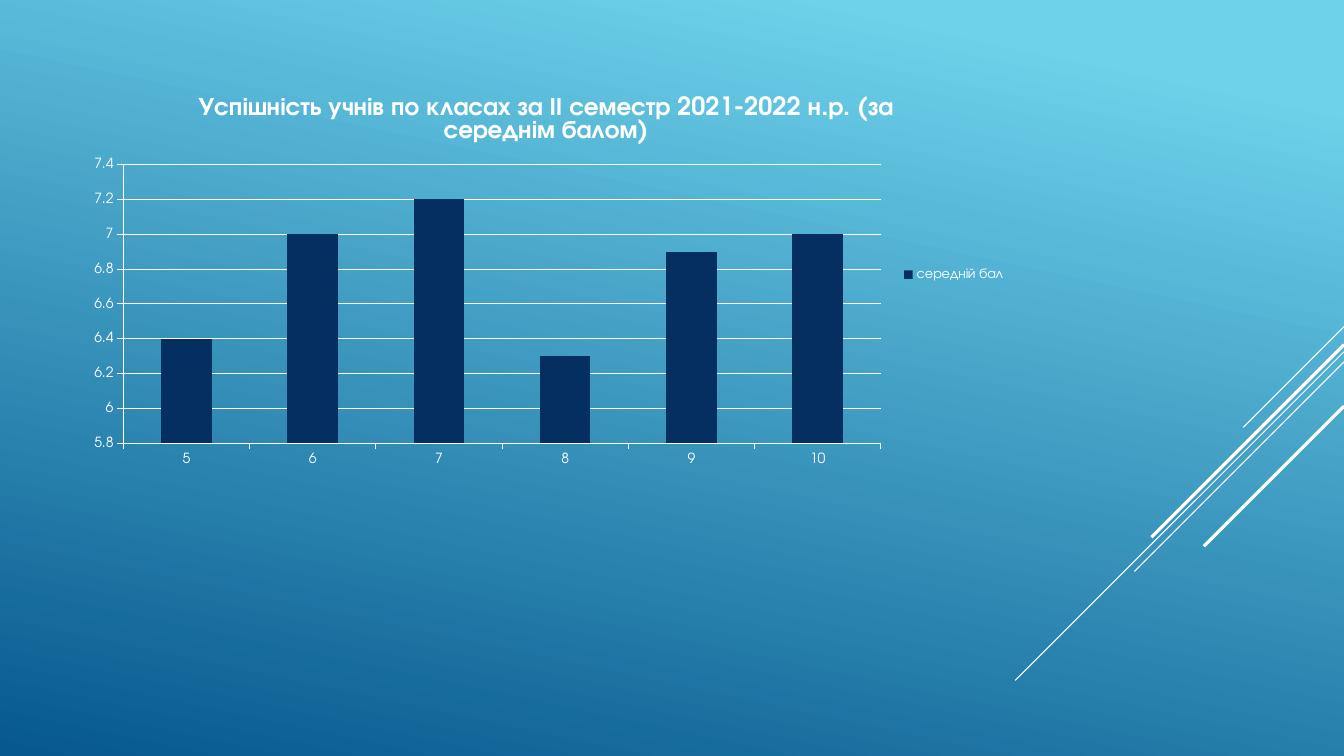
from pptx import Presentation
from pptx.chart.data import CategoryChartData as ChartData
from pptx.dml.color import RGBColor
from pptx.enum.chart import XL_CHART_TYPE as ChartType
from pptx.enum.chart import XL_LEGEND_POSITION as LegendPosition
from pptx.enum.chart import XL_TICK_MARK as TickMark
from pptx.enum.shapes import MSO_CONNECTOR as Connector
from pptx.oxml.ns import qn
from pptx.util import Inches, Pt
from lxml.etree import SubElement

COLOURS = {"white": "FFFFFF", "sky": "6ED2EB", "ocean": "06588E", "navy": "052F61"}
FONT = "TeX Gyre Adventor"
PAGE_WIDTH, PAGE_HEIGHT = 13.33, 7.5


class SlideBuilder:
    def __init__(self, page):
        self.page = page

    def colour(self, name):
        return RGBColor.from_string(COLOURS[name])

    def style_font(self, font, size, bold=False):
        font.name = FONT
        font.size = Pt(size)
        font.bold = bold
        font.color.rgb = self.colour("white")

    def style_line(self, line, width):
        line.color.rgb = self.colour("white")
        line.width = Pt(width)

    def background(self, stops, angle):
        fill = self.page.background.fill
        fill.gradient()
        fill.gradient_angle = angle
        for stop, (position, name) in zip(fill.gradient_stops, stops):
            stop.position = position
            stop.color.rgb = self.colour(name)

    def diagonal(self, top, length, width):
        """Draw a 45-degree line down and left from the right edge."""
        line = self.page.shapes.add_connector(
            Connector.STRAIGHT, Inches(PAGE_WIDTH), Inches(top),
            Inches(PAGE_WIDTH - length), Inches(top + length))
        self.style_line(line.line, width)
        SubElement(line._element.spPr, qn("a:effectLst"))

    def column_chart(self, box, title, categories, series_name, values):
        data = ChartData()
        data.categories = categories
        data.add_series(series_name, values)
        chart = self.page.shapes.add_chart(
            ChartType.COLUMN_CLUSTERED, *map(Inches, box), data).chart
        self.style_font(chart.font, 10)

        # Title and legend
        chart.has_title = True
        chart.chart_title.include_in_layout = False
        para = chart.chart_title.text_frame.paragraphs[0]
        para.text = title
        self.style_font(para.runs[0].font, 18, bold=True)
        chart.has_legend = True
        chart.legend.position = LegendPosition.RIGHT
        chart.legend.include_in_layout = False

        # Columns
        plot = chart.plots[0]
        plot.gap_width = 150
        plot.vary_by_categories = False
        series = plot.series[0]
        series.invert_if_negative = False
        series.format.fill.solid()
        series.format.fill.fore_color.rgb = self.colour("navy")

        # Axes
        for axis in (chart.category_axis, chart.value_axis):
            axis.major_tick_mark = TickMark.OUTSIDE
            axis.minor_tick_mark = TickMark.NONE
            self.style_line(axis.format.line, 0.75)
        scale = chart.value_axis
        scale.minimum_scale, scale.maximum_scale, scale.major_unit = 5.8, 7.4, 0.2
        scale.tick_labels.number_format = "General"
        scale.tick_labels.number_format_is_linked = False
        scale.has_major_gridlines = True
        self.style_line(scale.major_gridlines.format.line, 0.75)


def main():
    deck = Presentation()
    deck.slide_width, deck.slide_height = Inches(PAGE_WIDTH), Inches(PAGE_HEIGHT)
    builder = SlideBuilder(deck.slides.add_slide(deck.slide_layouts[6]))

    # Background: the angle runs counter-clockwise
    builder.background([(0.1, "sky"), (1, "ocean")], 360 - 102)

    # Diagonal strokes: top, length, width
    for top, length, width in [(3.24, 1, 0.75), (3.49, 3.26, 0.75), (3.59, 2.08, 0.75),
                               (3.42, 1.91, 2.25), (4.03, 1.39, 2.25)]:
        builder.diagonal(top, length, width)

    # Grades chart
    builder.column_chart(
        (0.75, 0.75, 9.33, 3.95),
        "Успішність учнів по класах за ІІ семестр 2021-2022 н.р. (за середнім балом)",
        ["5", "6", "7", "8", "9", "10"],
        "середній бал", [6.4, 7, 7.2, 6.3, 6.9, 7])

    deck.save("out.pptx")


if __name__ == "__main__":
    main()
